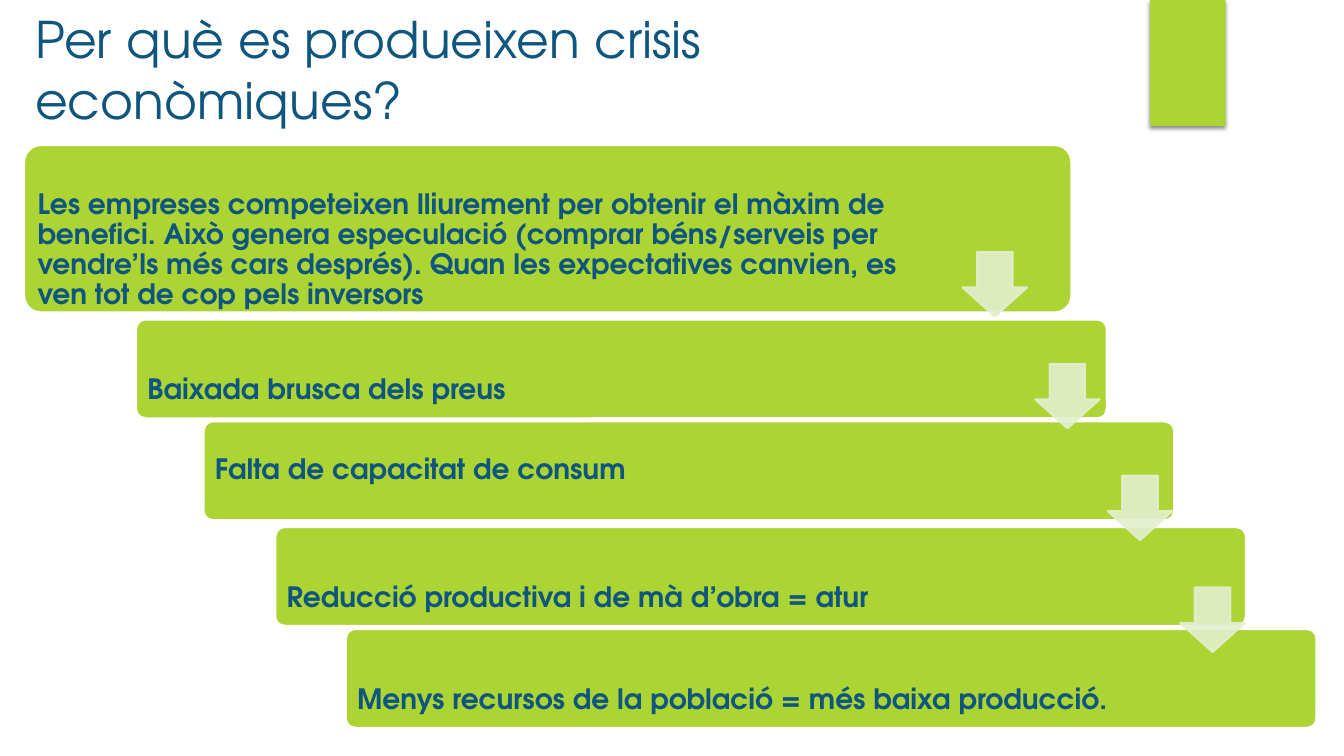
"""Builds a slide with the descending chain of causes of economic crises."""
import pptx
import pptx.util
import pptx.dml.color
import pptx.enum.shapes
import pptx.enum.text
import pptx.oxml
import pptx.oxml.ns

Pt = pptx.util.Pt
RGBColor = pptx.dml.color.RGBColor
MSO_SHAPE = pptx.enum.shapes.MSO_SHAPE
MIDDLE = pptx.enum.text.MSO_ANCHOR.MIDDLE

GREEN = RGBColor(0xAC, 0xD4, 0x33)
PALE = RGBColor(0xE3, 0xEF, 0xCE)
BLUE = RGBColor(0x0E, 0x55, 0x80)
WHITE = RGBColor(0xFF, 0xFF, 0xFF)
FONT = "TeX Gyre Adventor"
NS = pptx.oxml.ns.nsdecls("a")

prs = pptx.Presentation()
prs.slide_width, prs.slide_height = Pt(960), Pt(540)
s = prs.slides.add_slide(prs.slide_layouts[6])


def add_shape(kind, box, fill, line=None):
    sp = s.shapes.add_shape(kind, *map(Pt, box))
    sp.shadow.inherit = False
    sp.fill.solid()
    sp.fill.fore_color.rgb = fill
    if line is None:
        sp.line.fill.background()
    else:
        sp.line.color.rgb = line
        sp.line.width = Pt(1.5)
    return sp


def add_text(box, text, frame, paragraph, font):
    tf = s.shapes.add_textbox(*map(Pt, box)).text_frame
    p = tf.paragraphs[0]
    r = p.add_run()
    r.text = text
    r.font.color.rgb = BLUE
    shared_frame = {"word_wrap": True, "vertical_anchor": MIDDLE}
    for obj, values in ((tf, shared_frame | frame), (p, paragraph),
                        (r.font, {"name": FONT} | font)):
        for name, value in values.items():
            setattr(obj, name, value)


tab = add_shape(MSO_SHAPE.RECTANGLE, (821.5, 0, 54, 90), GREEN)
effects = tab._element.spPr.find(pptx.oxml.ns.qn("a:effectLst"))
effects.append(pptx.oxml.parse_xml(
    f'<a:outerShdw {NS} blurRad="38100" dist="25400" dir="5400000" rotWithShape="0">'
    '<a:srgbClr val="000000"><a:alpha val="45000"/></a:srgbClr></a:outerShdw>'))

add_text((18, 21.6, 689.8, 55.4), "Per què es produeixen crisis econòmiques?",
         {}, {}, {"size": Pt(36)})

LOWERED = 31
steps = [
    ((17.3, 103.7, 748, 119.5), 3.5, 655.2, LOWERED,
     "Les empreses competeixen lliurement per obtenir el màxim de benefici. "
     "Això genera especulació (comprar béns/serveis per vendre’ls més cars "
     "després). Quan les expectatives canvien, es ven tot de cop pels inversors"),
]
for left, top, drop, text in (
    (97.2, 228.2, LOWERED, "Baixada brusca dels preus"),
    (145.4, 301, 0, "Falta de capacitat de consum"),
    (196.6, 376.5, LOWERED, "Reducció productiva i de mà d’obra = atur"),
    (247, 449.3, LOWERED, "Menys recursos de la població = més baixa producció."),
):
    steps.append(((left, top, 693.4, 70.6), 2.1, 591.8, drop, text))

for box, pad, text_width, drop, text in steps:
    left, top, width, height = box
    sp = add_shape(MSO_SHAPE.ROUNDED_RECTANGLE, box, GREEN, WHITE)
    sp.adjustments[0] = 0.1
    add_text((left + pad, top + pad, text_width, height - 2 * pad), text,
             {"margin_left": Pt(6), "margin_right": Pt(6),
              "margin_top": Pt(6 + drop), "margin_bottom": Pt(6)},
             {"line_spacing": 0.9, "space_after": Pt(7)},
             {"size": Pt(20), "bold": True})

for i in range(4):
    sp = add_shape(MSO_SHAPE.DOWN_ARROW,
                   (687.6 + 51.84 * i, 180 + 79.9 * i, 46.1, 46.1), PALE, PALE)
    sp.adjustments[0], sp.adjustments[1] = 0.55, 0.45
    for color in sp._element.spPr.iter(pptx.oxml.ns.qn("a:srgbClr")):
        color.append(pptx.oxml.parse_xml(f'<a:alpha {NS} val="90000"/>'))

prs.save("out.pptx")
